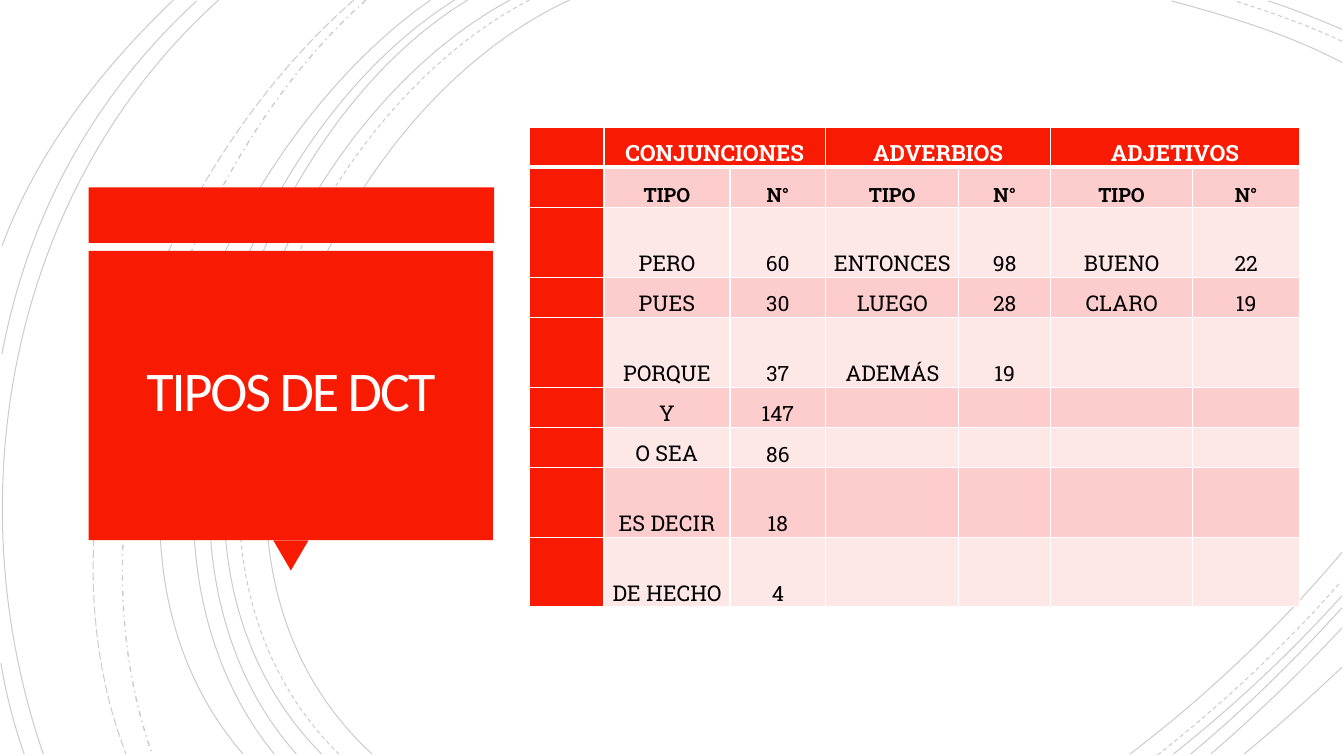
from lxml import etree
from pptx import Presentation
from pptx import util as u
from pptx.dml.color import RGBColor
from pptx.enum import dml, shapes, text
from pptx.oxml.ns import qn

RED = RGBColor(0xF8, 0x1B, 0x02)
PINK = RGBColor(0xFC, 0xCD, 0xCC)
PALE = RGBColor(0xFE, 0xE8, 0xE7)
WHITE = RGBColor(0xFF, 0xFF, 0xFF)
TITLE_WHITE = RGBColor(0xFF, 0xFE, 0xFF)
BLACK = RGBColor(0, 0, 0)

TITLE = "TIPOS DE DCT"
GROUPS = ["CONJUNCIONES", "ADVERBIOS", "ADJETIVOS"]
ROWS = [
    ["TIPO", "N°"] * 3,
    ["PERO", "60", "ENTONCES", "98", "BUENO", "22"],
    ["PUES", "30", "LUEGO", "28", "CLARO", "19"],
    ["PORQUE", "37", "ADEMÁS", "19"],
    ["Y", "147"],
    ["O SEA", "86"],
    ["ES DECIR", "18"],
    ["DE HECHO", "4"],
]
COLUMN_WIDTHS = [0.74, 1.25, 0.95, 1.32, 0.91, 1.41, 1.06]
SHORT, TALL = 0.4, 0.69
ROW_HEIGHTS = [SHORT, SHORT, TALL, SHORT, TALL, SHORT, SHORT, TALL, TALL]
TABLE_LEFT, TABLE_TOP = 5.25, 1.26

# Each arc is a cubic curve: start, two handles, end
ARCS = {
    ("SOLID", 0.75): [
        [(5.65, 0), (3.15, 1.15), (1.43, 5.4), (3.69, 7.48)],
        [(13.31, 0.62), (12.78, 0.34), (12.18, 0.16), (11.62, 0.01)],
        [(11.21, 7.48), (11.97, 6.9), (12.69, 6.22), (13.31, 5.48)],
        [(5.06, 0), (2.7, 1.27), (1.1, 5.37), (3.19, 7.48)],
        [(13.31, 0.29), (13.07, 0.19), (12.83, 0.09), (12.58, 0.01)],
        [(11.64, 7.48), (12.23, 7.01), (12.8, 6.48), (13.31, 5.91)],
        [(4.64, 0), (2.44, 1.33), (1.1, 5.41), (2.94, 7.48)],
        [(11.81, 7.48), (12.34, 7.04), (12.84, 6.55), (13.31, 6.03)],
        [(4.51, 0), (2.31, 1.38), (0.97, 5.33), (2.72, 7.48)],
        [(12.01, 7.48), (12.46, 7.09), (12.9, 6.67), (13.31, 6.23)],
        [(4.27, 0), (2.17, 1.47), (0.53, 5.29), (2.41, 7.48)],
        [(12.34, 7.48), (12.67, 7.21), (12.99, 6.92), (13.31, 6.62)],
        [(2.17, 0), (0.11, 1.85), (-0.46, 4.9), (0.43, 7.48)],
        [(1.95, 0.01), (0.92, 0.96), (0.28, 2.14), (0.02, 3.51)],
        [(0.01, 6.58), (0.06, 6.89), (0.14, 7.19), (0.24, 7.48)],
        [(1.72, 0), (1, 0.69), (0.37, 1.5), (0.02, 2.44)],
    ],
    ("DASH", 0.75): [
        [(5.25, 0), (2.85, 1.25), (1.23, 5.37), (3.36, 7.48)],
        [(13.31, 0.41), (12.97, 0.25), (12.6, 0.12), (12.25, 0.01)],
        [(11.48, 7.49), (12.13, 6.98), (12.75, 6.4), (13.3, 5.77)],
    ],
    ("DASH_DOT", 1): [[(3.63, 0), (1.76, 1.66), (0.65, 5.09), (1.51, 7.48)]],
    ("LONG_DASH", 0.75): [[(3.51, 0), (1.57, 1.69), (0.29, 4.99), (1.25, 7.48)]],
}

PANELS = [
    (shapes.MSO_SHAPE.RECTANGLE, (0.88, 1.86, 4.02, 0.55), 0),
    (shapes.MSO_SHAPE.ISOSCELES_TRIANGLE, (2.71, 5.36, 0.35, 0.3), 180),
    (shapes.MSO_SHAPE.RECTANGLE, (0.88, 2.49, 4.01, 2.87), 0),
]
TITLE_BOX = (0.97, 2.57, 3.83, 2.69)


def inches(values):
    return [u.Inches(value) for value in values]


def bend(arc):
    """Turn the three straight segments of a freeform into one cubic curve."""
    outline = next(arc._element.iter(qn("a:path")))
    segments = outline.findall(qn("a:lnTo"))
    curve = etree.SubElement(outline, qn("a:cubicBezTo"))
    for segment in segments:
        curve.append(segment[0])
        outline.remove(segment)


def draw_arc(page, points, dash, width):
    start, *others = [inches(point) for point in points]
    builder = page.shapes.build_freeform(*start)
    builder.add_line_segments(others, close=False)
    arc = builder.convert_to_shape()
    bend(arc)
    arc.shadow.inherit = False
    arc.fill.background()
    arc.line.color.rgb = BLACK
    arc.line.width = u.Pt(width)
    arc.line.dash_style = getattr(dml.MSO_LINE, dash)
    line = arc._element.spPr.find(qn("a:ln"))
    color = next(line.iter(qn("a:srgbClr")))
    etree.SubElement(color, qn("a:alpha"), val="20000")


def write(frame, words, size, color, font="Roboto Slab", bold=False, leading=1.07, spacing=0):
    para = frame.paragraphs[0]
    para.alignment = text.PP_ALIGN.CENTER
    para.line_spacing = leading
    span = para.add_run()
    span.text = words
    span.font.size = u.Pt(size)
    span.font.name = font
    span.font.bold = bold
    span.font.color.rgb = color
    if spacing:
        span.font._element.set("spc", str(int(spacing * 100)))


def style_cell(cell, fill, heavy_side):
    """Fill the cell and rule its four sides in white, one of them thicker."""
    cell.fill.solid()
    cell.fill.fore_color.rgb = fill
    properties = cell._tc.get_or_add_tcPr()
    for index, side in enumerate("LRTB"):
        width = u.Pt(3 if side == heavy_side else 1)
        line = etree.Element(qn(f"a:ln{side}"), w=str(int(width)))
        solid = etree.SubElement(line, qn("a:solidFill"))
        etree.SubElement(solid, qn("a:srgbClr"), val=str(WHITE))
        properties.insert(index, line)


def fill_cell(cell, words, **style):
    cell.vertical_anchor = text.MSO_ANCHOR.BOTTOM
    cell.margin_left = cell.margin_right = u.Inches(0.05)
    cell.margin_top = cell.margin_bottom = 0
    write(cell.text_frame, words, **style)


def draw_table(page):
    frame = page.shapes.add_table(
        len(ROW_HEIGHTS), len(COLUMN_WIDTHS),
        *inches((TABLE_LEFT, TABLE_TOP, sum(COLUMN_WIDTHS), sum(ROW_HEIGHTS))))
    table = frame.table
    for column, width in zip(table.columns, COLUMN_WIDTHS):
        column.width = u.Inches(width)
    for row, height in zip(table.rows, ROW_HEIGHTS):
        row.height = u.Inches(height)
    for r in range(len(ROW_HEIGHTS)):
        for c in range(len(COLUMN_WIDTHS)):
            fill = RED if r == 0 or c == 0 else PINK if r % 2 else PALE
            style_cell(table.cell(r, c), fill, {0: "B", 1: "T"}.get(r))
    for index, group in enumerate(GROUPS):
        first = 1 + 2 * index
        table.cell(0, first).merge(table.cell(0, first + 1))
        fill_cell(table.cell(0, first), group, size=16, color=WHITE, bold=True)
    for r, row in enumerate(ROWS, start=1):
        for c, words in enumerate(row, start=1):
            size = 14 if r == 1 else 15.5 if c % 2 else 15
            fill_cell(table.cell(r, c), words, size=size, color=BLACK, bold=r == 1)


def draw_title(page):
    for kind, place, rotation in PANELS:
        panel = page.shapes.add_shape(kind, *inches(place))
        panel.rotation = rotation
        panel.shadow.inherit = False
        panel.fill.solid()
        panel.fill.fore_color.rgb = RED
        panel.line.fill.background()
    frame = page.shapes.add_textbox(*inches(TITLE_BOX)).text_frame
    frame.word_wrap = True
    frame.vertical_anchor = text.MSO_ANCHOR.MIDDLE
    frame.margin_left = frame.margin_right = u.Inches(0.25)
    frame.margin_top = frame.margin_bottom = u.Inches(0.25)
    write(frame, TITLE, 40, TITLE_WHITE, font="Calibri", leading=0.85, spacing=-1.5)


def main():
    deck = Presentation()
    deck.slide_width, deck.slide_height = inches((13.33, 7.5))
    page = deck.slides.add_slide(deck.slide_layouts[6])
    for (dash, width), curves in ARCS.items():
        for points in curves:
            draw_arc(page, points, dash, width)
    draw_title(page)
    draw_table(page)
    deck.save("out.pptx")


if __name__ == "__main__":
    main()
